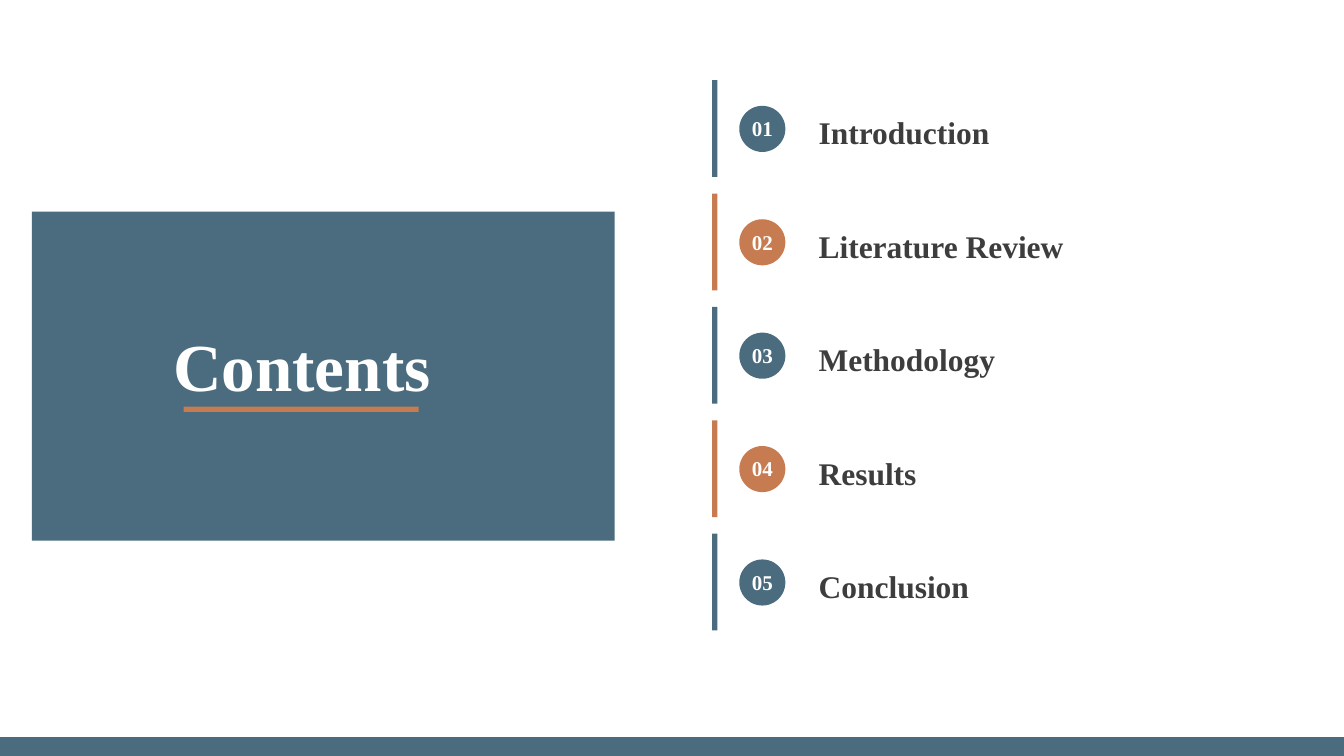
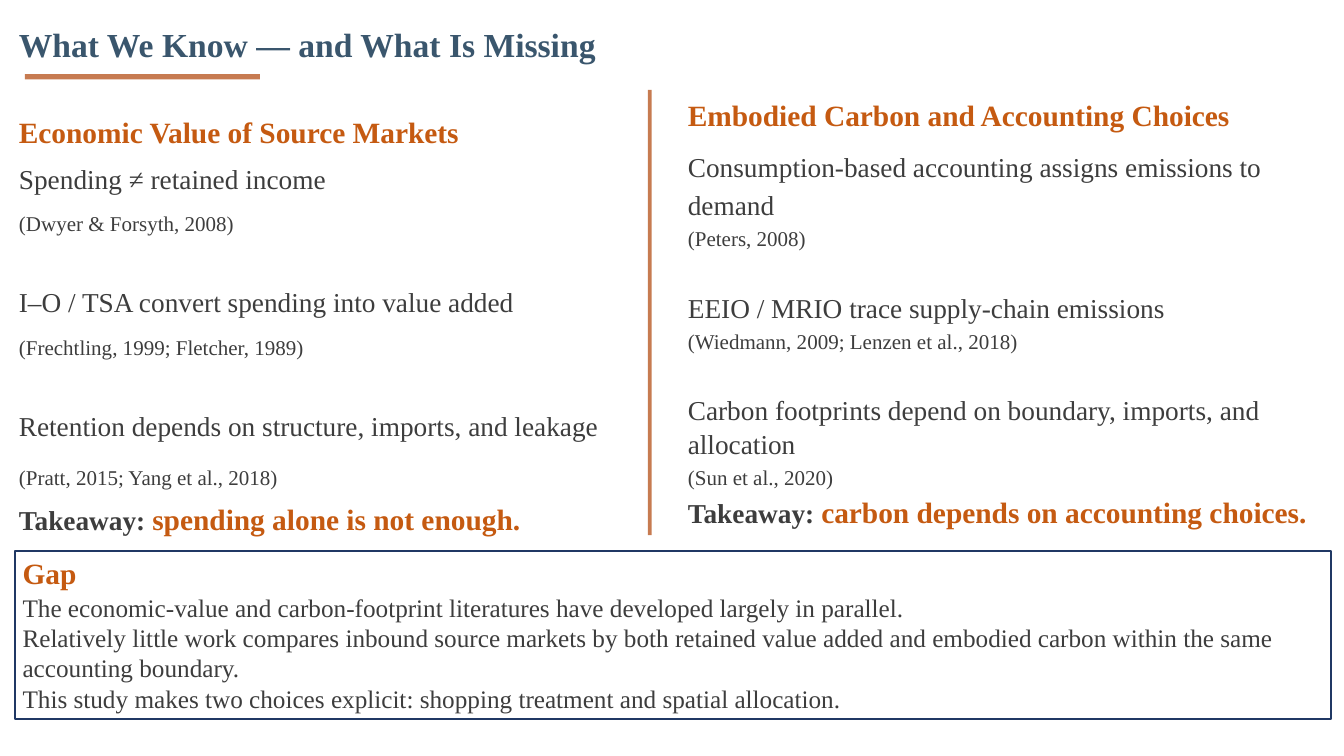
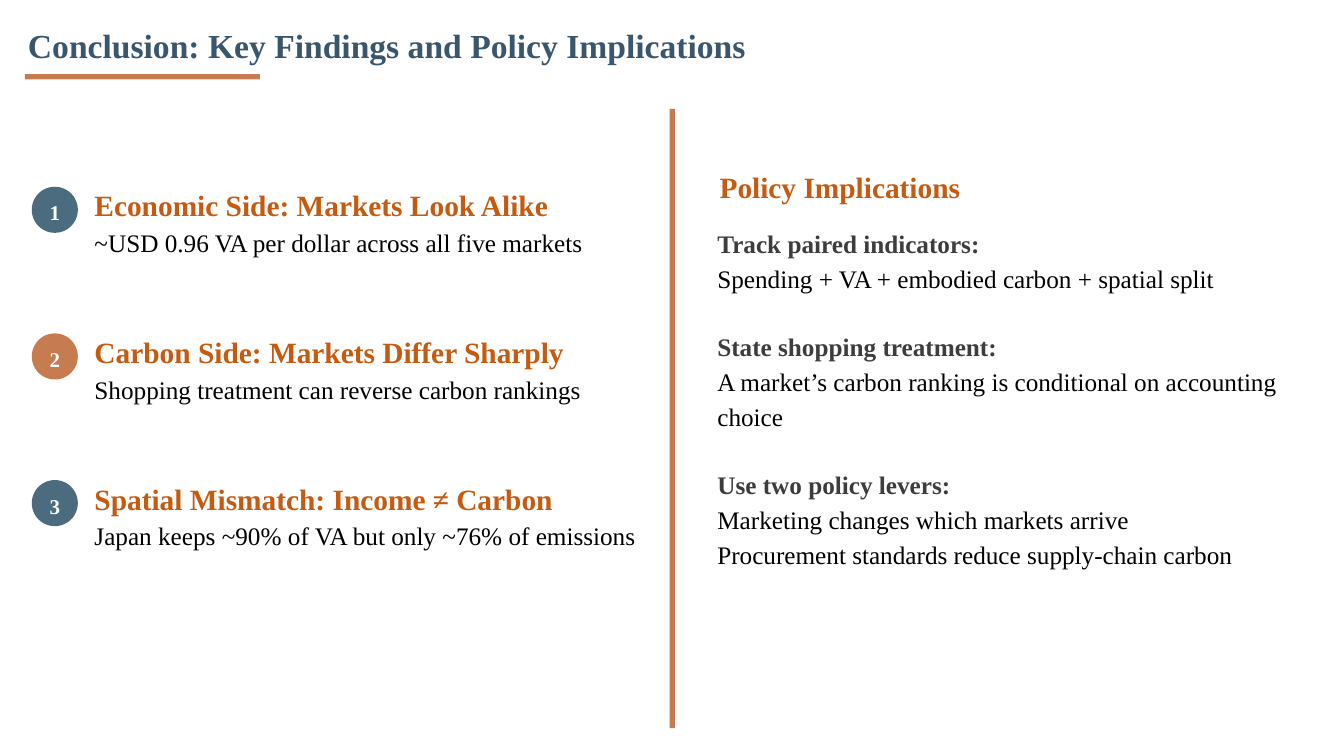
import dataclasses

import pptx
import pptx.dml.color
import pptx.enum.shapes
import pptx.enum.text
import pptx.util

Inches = pptx.util.Inches
Pt = pptx.util.Pt
SHAPE = pptx.enum.shapes.MSO_SHAPE
ALIGN = pptx.enum.text.PP_ALIGN
ANCHOR = pptx.enum.text.MSO_ANCHOR
AUTO_SIZE = pptx.enum.text.MSO_AUTO_SIZE


@dataclasses.dataclass(frozen=True)
class Theme:
    font: str = "Times New Roman"
    slate: str = "4A6C7E"
    copper: str = "C77B51"
    title: str = "3A566D"
    accent: str = "C55A11"
    body: str = "3D3D3D"
    black: str = "000000"
    white: str = "FFFFFF"
    frame: str = "203864"
    cover_size: int = 64
    title_size: int = 32
    entry_size: int = 30
    heading_size: int = 28
    claim_size: int = 26
    body_size: int = 24
    small_size: int = 20


THEME = Theme()
SLIDE_WIDTH, SLIDE_HEIGHT = 17.78, 10
BADGE_SIZE = 0.61


# Shared helpers
def rgb(color):
    return pptx.dml.color.RGBColor.from_string(color)


def place(shape, box):
    shape.left, shape.top, shape.width, shape.height = map(Inches, box)


def add_run(paragraph, text, *, size, color, bold=False):
    """Add text to a paragraph, with each newline as a line break."""
    for index, line in enumerate(text.split("\n")):
        if index:
            paragraph.add_line_break()
        run = paragraph.add_run()
        run.text = line
        run.font.name = THEME.font
        run.font.size = Pt(size)
        run.font.bold = bold
        run.font.color.rgb = rgb(color)


def add_text(frame, text, *, size, color, bold=False, align=ALIGN.LEFT,
             line=1.0, before=0, after=0):
    """Fill the empty first paragraph, or append a new one."""
    paragraph = frame.add_paragraph() if frame.text else frame.paragraphs[0]
    paragraph.alignment = align
    paragraph.line_spacing = line
    paragraph.space_before = Pt(before)
    paragraph.space_after = Pt(after)
    add_run(paragraph, text, size=size, color=color, bold=bold)
    return paragraph


def prepare_frame(shape, anchor=ANCHOR.TOP, wrap=True):
    frame = shape.text_frame
    frame.margin_left = frame.margin_right = 0
    frame.margin_top = frame.margin_bottom = 0
    frame.vertical_anchor = anchor
    frame.auto_size = AUTO_SIZE.NONE
    frame.word_wrap = wrap
    return frame


def add_text_box(slide, box, **options):
    return prepare_frame(slide.shapes.add_textbox(*map(Inches, box)), **options)


def add_block(slide, box, fill=None, kind=SHAPE.RECTANGLE):
    shape = slide.shapes.add_shape(kind, *map(Inches, box))
    shape.shadow.inherit = False
    shape.line.fill.background()
    if fill:
        shape.fill.solid()
        shape.fill.fore_color.rgb = rgb(fill)
    else:
        shape.fill.background()
    return shape


def add_badge(slide, left, top, label, fill, lift=0.0):
    badge = add_block(slide, (left, top, BADGE_SIZE, BADGE_SIZE), fill, SHAPE.OVAL)
    frame = prepare_frame(badge, ANCHOR.MIDDLE, wrap=False)
    frame.margin_bottom = Inches(2 * lift)
    add_text(frame, label, size=THEME.small_size, color=THEME.white, bold=True,
             align=ALIGN.CENTER, line=1.2)


def add_title(slide, text, box, *, size=THEME.title_size, color=THEME.title, line=1.2):
    title = slide.shapes.title
    title.element.getparent().append(title.element)  # bring to front
    place(title, box)
    frame = prepare_frame(title, ANCHOR.MIDDLE, wrap=False)
    add_text(frame, text, size=size, color=color, bold=True, line=line)


def add_underline(slide, left=0.33, top=0.98):
    add_block(slide, (left, top, 3.11, 0.07), THEME.copper)


def alternate(index):
    return THEME.copper if index % 2 else THEME.slate


def new_slide(presentation):
    return presentation.slides.add_slide(presentation.slide_layouts[5])


# Contents slide
def contents_panel(slide, box):
    left, top, _, _ = box
    add_block(slide, box, THEME.slate)
    add_title(slide, "Contents", (left + 1.87, top + 1.72, 4.24, 0.81),
              size=THEME.cover_size, color=THEME.white, line=0.8)
    add_underline(slide, left + 2.01, top + 2.58)


def contents_entry(slide, left, top, index, name):
    add_block(slide, (left, top, 0.07, 1.28), alternate(index))
    add_badge(slide, left + 0.36, top + 0.34, f"{index + 1:02}",
              alternate(index), lift=0.04)
    frame = add_text_box(slide, (left + 1.41, top + 0.23, 4.86, 0.82),
                         anchor=ANCHOR.MIDDLE, wrap=False)
    add_text(frame, name, size=THEME.entry_size, color=THEME.body, bold=True, line=1.2)


def contents_slide(presentation):
    slide = new_slide(presentation)
    contents_panel(slide, (0.42, 2.8, 7.71, 4.35))
    entries = ["Introduction", "Literature Review", "Methodology", "Results", "Conclusion"]
    for index, name in enumerate(entries):
        contents_entry(slide, 9.42, 1.06 + 1.5 * index, index, name)
    add_block(slide, (0, SLIDE_HEIGHT - 0.25, SLIDE_WIDTH, 0.25), THEME.slate)


# Literature slide
def literature_column(slide, box, heading, points, takeaway, spacing, takeaway_before):
    frame = add_text_box(slide, box)
    add_text(frame, heading, size=THEME.heading_size, color=THEME.accent,
             bold=True, line=1.15, after=4)
    for claim, citation, claim_spacing in points:
        add_text(frame, claim, size=THEME.claim_size, color=THEME.body,
                 **{**spacing, **claim_spacing})
        add_text(frame, citation, size=THEME.small_size, color=THEME.body, **spacing)
    paragraph = add_text(frame, "Takeaway: ", size=THEME.claim_size, color=THEME.body,
                         bold=True, **{**spacing, "before": takeaway_before})
    add_run(paragraph, takeaway, size=THEME.heading_size, color=THEME.accent, bold=True)


def gap_box(slide, box):
    shape = add_block(slide, box)
    shape.line.color.rgb = rgb(THEME.frame)
    shape.line.width = Pt(2.25)
    frame = shape.text_frame
    frame.word_wrap = True
    frame.vertical_anchor = ANCHOR.TOP
    frame.auto_size = AUTO_SIZE.SHAPE_TO_FIT_TEXT
    add_text(frame, "Gap", size=THEME.heading_size, color=THEME.accent, bold=True)
    add_text(
        frame,
        "The economic-value and carbon-footprint literatures have developed largely in parallel.\n"
        "Relatively little work compares inbound source markets by both retained value added "
        "and embodied carbon within the same accounting boundary.\n"
        "This study makes two choices explicit: shopping treatment and spatial allocation.",
        size=THEME.body_size, color=THEME.body, before=2, after=2)


def literature_slide(presentation):
    slide = new_slide(presentation)
    add_title(slide, "What We Know — and What Is Missing", (0.25, 0.08, 17.36, 0.9))
    literature_column(
        slide, (0.25, 1.44, 8.19, 5.67), "Economic Value of Source Markets",
        [("Spending ≠ retained income", "(Dwyer & Forsyth, 2008)", {}),
         ("I–O / TSA convert spending into value added",
          "(Frechtling, 1999; Fletcher, 1989)", {"before": 47.2}),
         ("Retention depends on structure, imports, and leakage",
          "(Pratt, 2015; Yang et al., 2018)", {"before": 47.2, "after": 6})],
        "spending alone is not enough.",
        spacing={"line": Pt(31.2), "before": 8}, takeaway_before=14)
    add_block(slide, (8.57, 1.19, 0.05, 5.89), THEME.copper)
    literature_column(
        slide, (9.1, 1.22, 8.47, 5.89), "Embodied Carbon and Accounting Choices",
        [("Consumption-based accounting assigns emissions to demand",
          "(Peters, 2008)", {"line": 1.15, "before": 8, "after": 4}),
         ("EEIO / MRIO trace supply-chain emissions",
          "(Wiedmann, 2009; Lenzen et al., 2018)", {"before": 34}),
         ("Carbon footprints depend on boundary, imports, and allocation",
          "(Sun et al., 2020)", {"before": 34})],
        "carbon depends on accounting choices.",
        spacing={"line": 1.04, "after": 3}, takeaway_before=0)
    gap_box(slide, (0.2, 7.29, 17.41, 2.22))
    add_underline(slide)


# Conclusion slide
def finding(slide, left, top, index, heading, detail):
    add_badge(slide, left, top, str(index + 1), alternate(index))
    frame = add_text_box(slide, (left + 0.83, top - 0.06, 7.78, 1.67))
    add_text(frame, heading, size=THEME.heading_size, color=THEME.accent,
             bold=True, line=1.15)
    add_text(frame, detail, size=THEME.body_size, color=THEME.black, line=1.15)


def policy_column(slide, box, policies):
    left, top, width, height = box
    heading = add_text_box(slide, (left + 0.03, top, 7.5, 0.62),
                           anchor=ANCHOR.MIDDLE, wrap=False)
    add_text(heading, "Policy Implications", size=THEME.heading_size,
             color=THEME.accent, bold=True, line=1.15)
    frame = add_text_box(slide, (left, top + 0.83, width, height - 0.83))
    for index, (policy, *details) in enumerate(policies):
        add_text(frame, policy, size=THEME.body_size, color=THEME.body, bold=True,
                 line=1.15, before=32 if index else 0)
        for detail in details:
            add_text(frame, detail, size=THEME.body_size, color=THEME.black, line=1.15)


def conclusion_slide(presentation):
    slide = new_slide(presentation)
    add_title(slide, "Conclusion: Key Findings and Policy Implications",
              (0.37, 0.09, 17.36, 0.9))
    findings = [
        ("Economic Side: Markets Look Alike",
         "~USD 0.96 VA per dollar across all five markets"),
        ("Carbon Side: Markets Differ Sharply",
         "Shopping treatment can reverse carbon rankings"),
        ("Spatial Mismatch: Income ≠ Carbon",
         "Japan keeps ~90% of VA but only ~76% of emissions"),
    ]
    for index, (heading, detail) in enumerate(findings):
        finding(slide, 0.42, 2.47 + 1.94 * index, index, heading, detail)
    add_block(slide, (8.86, 1.44, 0.07, 8.19), THEME.copper)
    policy_column(slide, (9.49, 2.13, 7.87, 6.34), [
        ("Track paired indicators:", "Spending + VA + embodied carbon + spatial split"),
        ("State shopping treatment:",
         "A market’s carbon ranking is conditional on accounting choice"),
        ("Use two policy levers:", "Marketing changes which markets arrive",
         "Procurement standards reduce supply-chain carbon"),
    ])
    add_underline(slide)


def main():
    presentation = pptx.Presentation()
    presentation.slide_width = Inches(SLIDE_WIDTH)
    presentation.slide_height = Inches(SLIDE_HEIGHT)
    contents_slide(presentation)
    literature_slide(presentation)
    conclusion_slide(presentation)
    presentation.save("out.pptx")


if __name__ == "__main__":
    main()
